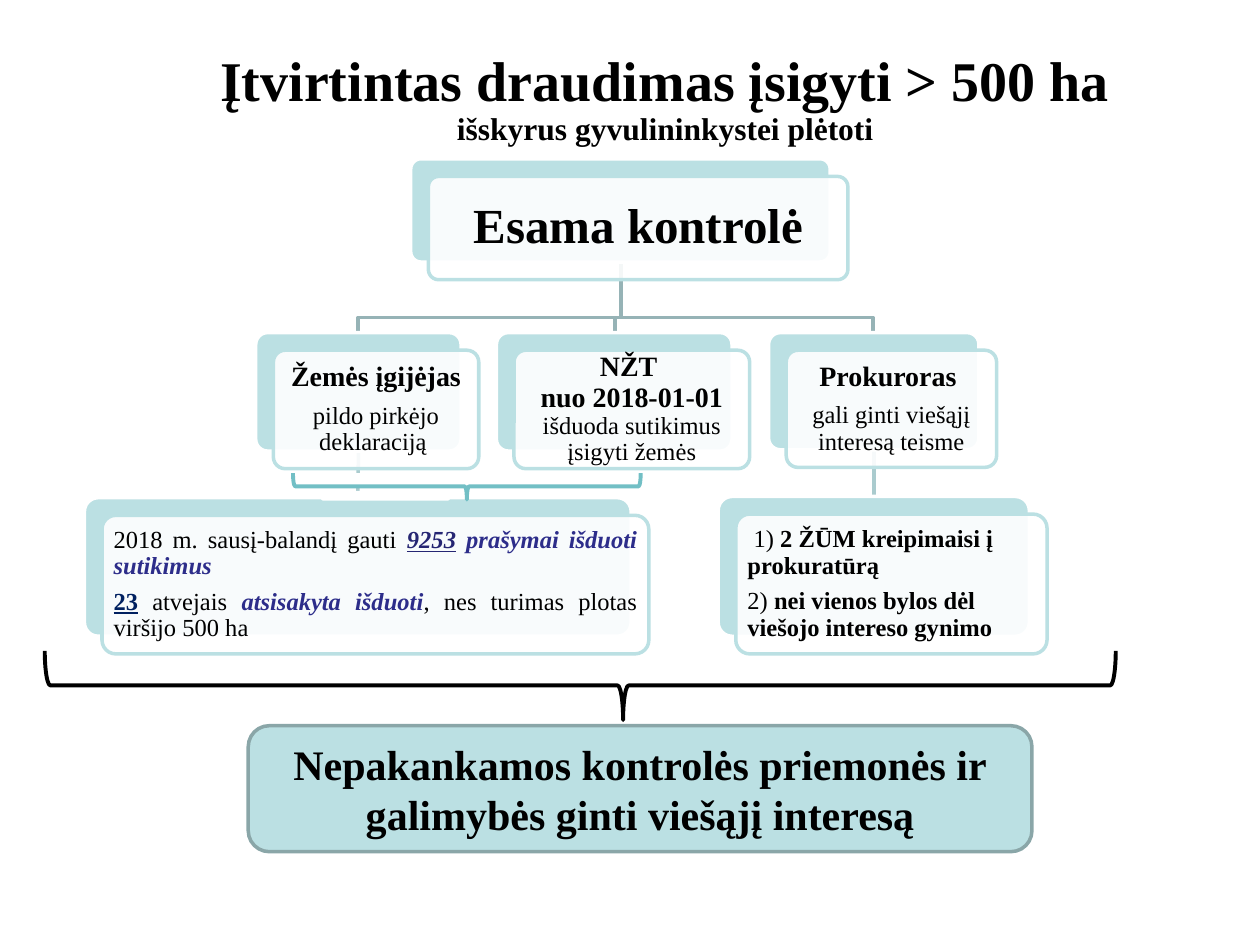
import pptx
import pptx.dml.color
import pptx.enum.shapes
import pptx.enum.text
import pptx.oxml.ns
import pptx.util
from lxml import etree

RGB = pptx.dml.color.RGBColor
BLACK = RGB(0x00, 0x00, 0x00)
WHITE = RGB(0xFF, 0xFF, 0xFF)
PALE = RGB(0xBB, 0xE0, 0xE3)
TEAL = RGB(0x72, 0xBF, 0xC5)
EDGE = RGB(0x8A, 0xA6, 0xA8)
TRUNK = RGB(0x96, 0xB3, 0xB6)
TWIG = RGB(0xAA, 0xCB, 0xCE)
NAVY = RGB(0x00, 0x20, 0x60)
INK = RGB(0x26, 0x26, 0x73)
BLUE = RGB(0x2D, 0x2D, 0x8A)

FONT = "Times New Roman"
COLS = 100
WIDTH = pptx.util.Inches(10)
HEIGHT = pptx.util.Inches(7.5)
SHIFT = 1.4
FORM = pptx.enum.shapes.MSO_SHAPE
ALIGN = pptx.enum.text.PP_ALIGN
MIDDLE = pptx.enum.text.MSO_ANCHOR.MIDDLE
qn = pptx.oxml.ns.qn


def grid(*cells):
    """Turn counts of square grid cells into lengths."""
    return [round(n * WIDTH / COLS) for n in cells]


def style(run, size, marks="", color=BLACK):
    """Format a run; marks hold b, i and u."""
    font = run.font
    font.name, font.size = FONT, pptx.util.Pt(size)
    font.bold, font.italic = "b" in marks, "i" in marks
    font.underline = "u" in marks
    font.color.rgb = color


def write(frame, paras, align=ALIGN.CENTER, pad=None, tight=True):
    """Fill a frame with paragraphs, each a list of runs and a gap after."""
    frame.word_wrap, frame.vertical_anchor = True, MIDDLE
    if pad is not None:
        frame.margin_left, frame.margin_top = grid(pad, pad)
        frame.margin_right, frame.margin_bottom = grid(pad, pad)
    for i, (runs, gap) in enumerate(paras):
        para = frame.paragraphs[0] if i == 0 else frame.add_paragraph()
        para.alignment = align
        if tight:
            para.line_spacing = 0.9
        para.space_after = pptx.util.Pt(gap)
        for text, *look in runs:
            run = para.add_run()
            run.text = text
            style(run, *look)


def shape(slide, form, box, fill, line, width=2, adjust=()):
    """Add a preset shape with its fill and line."""
    item = slide.shapes.add_shape(form, *grid(*box))
    item.shadow.inherit = False
    if fill is None:
        item.fill.background()
    else:
        item.fill.solid()
        item.fill.fore_color.rgb = fill
    item.line.color.rgb, item.line.width = line, pptx.util.Pt(width)
    for i, share in enumerate(adjust):
        item.adjustments[i] = share
    return item


def card(slide, box, paras, pad, align=ALIGN.CENTER):
    """Add a pale plate with a clear text card over it and return the plate."""
    left, top, wide, high = box
    plate = shape(slide, FORM.ROUNDED_RECTANGLE, box, PALE, WHITE, 2, [0.1])
    front = shape(slide, FORM.ROUNDED_RECTANGLE,
                  (left + SHIFT, top + SHIFT, wide, high), WHITE, PALE, 2, [0.1])
    tint = front.fill._xPr.find(".//" + qn("a:srgbClr"))
    etree.SubElement(tint, qn("a:alpha"), val="90000")
    write(front.text_frame, paras, align, pad)
    return plate


def branch(slide, points):
    """Draw an open bent line through grid points."""
    path = [tuple(grid(*point)) for point in points]
    maker = slide.shapes.build_freeform(*path[0])
    maker.add_line_segments(path[1:], close=False)
    line = maker.convert_to_shape()
    line.shadow.inherit = False
    line.fill.background()
    line.line.color.rgb, line.line.width = TRUNK, pptx.util.Pt(2)


def link(slide, x, top, low):
    """Draw an upright connector."""
    kind = pptx.enum.shapes.MSO_CONNECTOR.STRAIGHT
    line = slide.shapes.add_connector(kind, *grid(x, top, x, low))
    line.line.color.rgb, line.line.width = TWIG, pptx.util.Pt(2)
    etree.SubElement(line._element.spPr, qn("a:effectLst"))
    return line


def brace(slide, box, fill, line, adjust):
    """Add a brace that points down, given its upright box."""
    item = shape(slide, FORM.RIGHT_BRACE, box, fill, line, 2.25, adjust)
    item.rotation = 90


def head(slide):
    """Set the title with its smaller second line."""
    title = slide.shapes.title
    title.left, title.top, title.width, title.height = grid(10.6, 3.6, 84.4, 8.7)
    frame = title.text_frame
    frame.auto_size = pptx.enum.text.MSO_AUTO_SIZE.NONE
    frame.vertical_anchor = MIDDLE
    para = frame.paragraphs[0]
    para.text = ("Įtvirtintas draudimas įsigyti > 500 ha\v"
                 "išskyrus gyvulininkystei plėtoti")
    para.alignment, para.line_spacing = ALIGN.CENTER, 0.9
    for run, size in zip(para.runs, (32, 18)):
        style(run, size, "b")
    etree.SubElement(para._p.find(qn("a:br")), qn("a:rPr"), sz="3200")


def tree(slide):
    """Build the control tree."""
    right = link(slide, 69.3, 35.7, 39.4)
    for x in (69.3, 48.8):
        branch(slide, [(49.3, 20.8), (49.3, 25.2), (x, 25.2), (x, 26.4)])
    left = link(slide, 28.4, 35.7, 39.5)
    branch(slide, [(49.3, 20.8), (49.3, 25.2), (28.4, 25.2), (28.4, 26.4)])
    card(slide, (32.6, 12.6, 33.3, 8.2),
         [([("Esama kontrolė", 28, "b")], 10)], 1.2)
    buyer = card(slide, (20.3, 26.4, 16.3, 9.4), [
        ([("Žemės įgijėjas", 16, "b")], 6),
        ([("pildo pirkėjo deklaraciją ", 14)], 5)], 0.7)
    count = card(slide, (6.7, 39.5, 43.4, 11), [
        ([("2018 m. sausį-balandį gauti ", 14),
          ("9253", 14, "biu", INK), (" ", 14, "i"),
          ("prašymai išduoti sutikimus", 14, "bi", BLUE)], 5),
        ([("23", 14, "bu", NAVY), (" ", 14, "b"), ("atvejais ", 14),
          ("atsisakyta išduoti", 14, "bi", BLUE),
          (", nes turimas plotas viršijo 500 ha", 14)], 5)],
        0.6, ALIGN.JUSTIFY)
    card(slide, (39.4, 26.4, 18.7, 9.4), [
        ([("NŽT ", 16, "b")], 0),
        ([("nuo 2018-01-01", 16, "b")], 0),
        ([("išduoda sutikimus įsigyti žemės", 14)], 5)], 0.7)
    court = card(slide, (61, 26.4, 16.7, 9.3), [
        ([("Prokuroras ", 16, "b")], 6),
        ([("gali ginti viešąjį interesą teisme", 14)], 5)], 0.7)
    cases = card(slide, (57, 39.4, 24.7, 11.1), [
        ([(" 1) ", 14), ("2 ŽŪM kreipimaisi į prokuratūrą", 14, "b")], 5),
        ([("2)", 14),
          (" nei vienos bylos dėl viešojo intereso gynimo", 14, "b")], 5)],
        0.6, ALIGN.LEFT)
    for line, upper, lower in ((right, court, cases), (left, buyer, count)):
        line.begin_connect(upper, 2)
        line.end_connect(lower, 0)


def close(slide):
    """Add the braces and the conclusion."""
    brace(slide, (43.3, 11.9, 5.5, 85), None, BLACK, [0.08, 0.46])
    result = shape(slide, FORM.ROUNDED_RECTANGLE, (19.7, 57.6, 62.2, 10),
                   PALE, EDGE)
    lines = ("Nepakankamos kontrolės priemonės ir",
             "galimybės ginti viešąjį interesą")
    write(result.text_frame, [([(text, 24, "b")], 0) for text in lines],
          tight=False)
    brace(slide, (36, 24.8, 2.1, 27.6), WHITE, TEAL, [0.08, 0.5])
    shape(slide, FORM.ROUNDED_RECTANGLE, (25.6, 39.1, 10, 0.5), WHITE, WHITE)


def main():
    """Build and save the slide."""
    deck = pptx.Presentation()
    deck.slide_width, deck.slide_height = WIDTH, HEIGHT
    slide = deck.slides.add_slide(deck.slide_layouts[5])
    head(slide)
    tree(slide)
    close(slide)
    deck.save("out.pptx")


if __name__ == "__main__":
    main()
